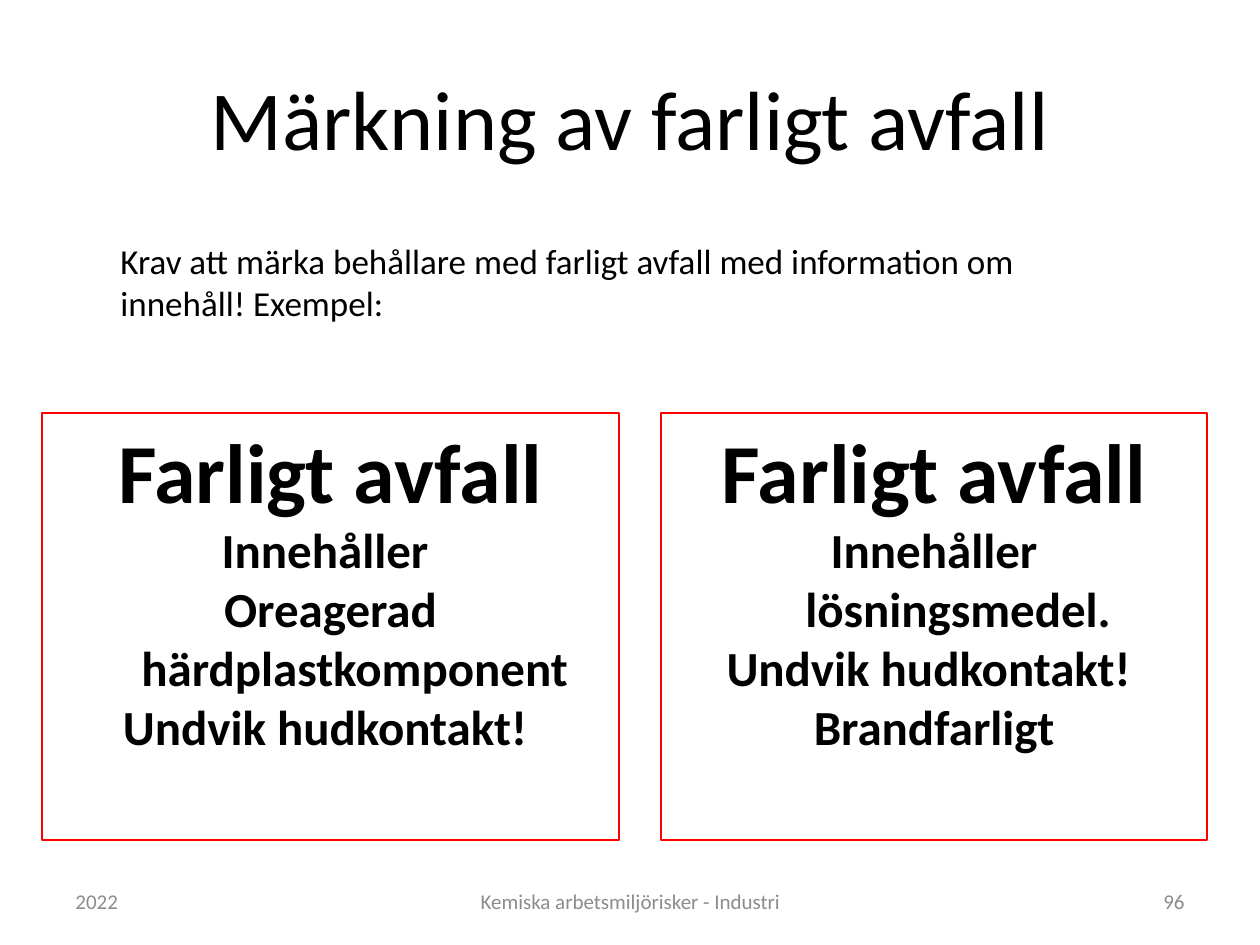
"""Build a slide on labelling hazardous waste, with two example labels."""
from pptx import Presentation
from pptx.dml.color import RGBColor
from pptx.enum.shapes import MSO_SHAPE
from pptx.enum.text import MSO_ANCHOR as ANCHOR, PP_ALIGN as ALIGN
from pptx.util import Emu, Pt

PX = 914400 / 126


def px(*lengths):
    return [Emu(round(length * PX)) for length in lengths]


def write(shape, lines, size, color="000000", align=ALIGN.LEFT, anchor=ANCHOR.TOP):
    frame = shape.text_frame
    frame.word_wrap = True
    frame.vertical_anchor = anchor
    frame.text = "\n".join(lines)
    for paragraph in frame.paragraphs:
        paragraph.alignment = align
        paragraph.font.name = "Calibri"
        paragraph.font.size = Pt(size)
        paragraph.font.color.rgb = RGBColor.from_string(color)
    return frame.paragraphs


presentation = Presentation()
presentation.slide_width, presentation.slide_height = px(1260, 945)
slide = presentation.slides.add_slide(presentation.slide_layouts[6])

title = slide.shapes.add_textbox(*px(63, 38, 1134, 158))
write(title, ["Märkning av farligt avfall"], 48, align=ALIGN.CENTER, anchor=ANCHOR.MIDDLE)

intro = slide.shapes.add_textbox(*px(108, 233, 1022, 97))
write(intro, ["Krav att märka behållare med farligt avfall med information om innehåll! Exempel:"], 20)

labels = [
    (42, 577, ["Innehåller ", "Oreagerad härdplastkomponent", "Undvik hudkontakt! "]),
    (661, 546, ["Innehåller lösningsmedel.", "Undvik hudkontakt! ", "Brandfarligt"]),
]
for left, width, lines in labels:
    label = slide.shapes.add_shape(MSO_SHAPE.RECTANGLE, *px(left, 413, width, 427))
    label.shadow.inherit = False
    label.fill.background()
    label.line.color.rgb = RGBColor.from_string("FF0000")
    label.line.width = Pt(0.75)
    paragraphs = write(label, ["Farligt avfall"] + lines, 28, align=ALIGN.CENTER)
    paragraphs[0].font.size = Pt(48)
    for paragraph in paragraphs:
        paragraph.font.bold = True
        properties = paragraph._p.get_or_add_pPr()
        indent = px(48)[0]
        properties.set("marL", str(indent))
        properties.set("indent", str(-indent))

footers = [
    (63, 294, "2022", ALIGN.LEFT),
    (431, 399, "Kemiska arbetsmiljörisker - Industri", ALIGN.CENTER),
    (903, 294, "96", ALIGN.RIGHT),
]
for left, width, text, align in footers:
    footer = slide.shapes.add_textbox(*px(left, 876, width, 50))
    write(footer, [text], 12, "8C8C8C", align, ANCHOR.MIDDLE)

presentation.save("out.pptx")
